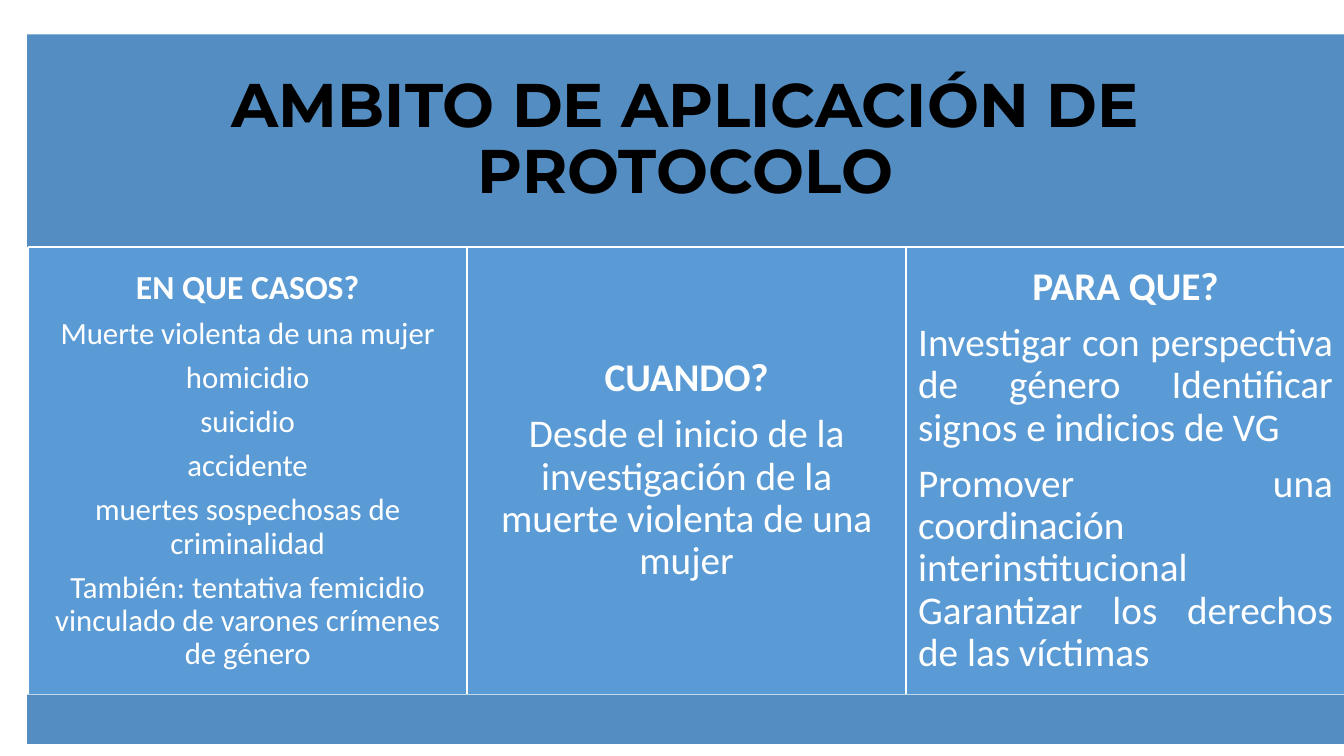
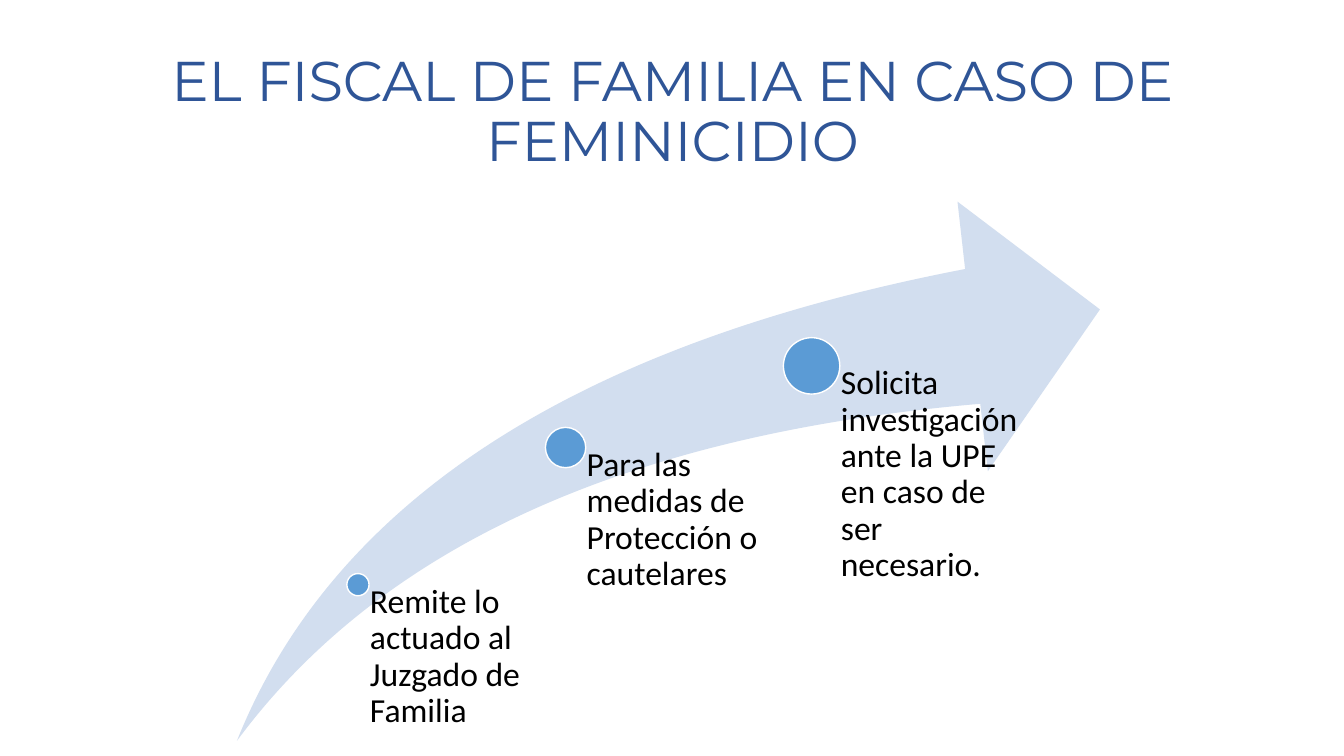
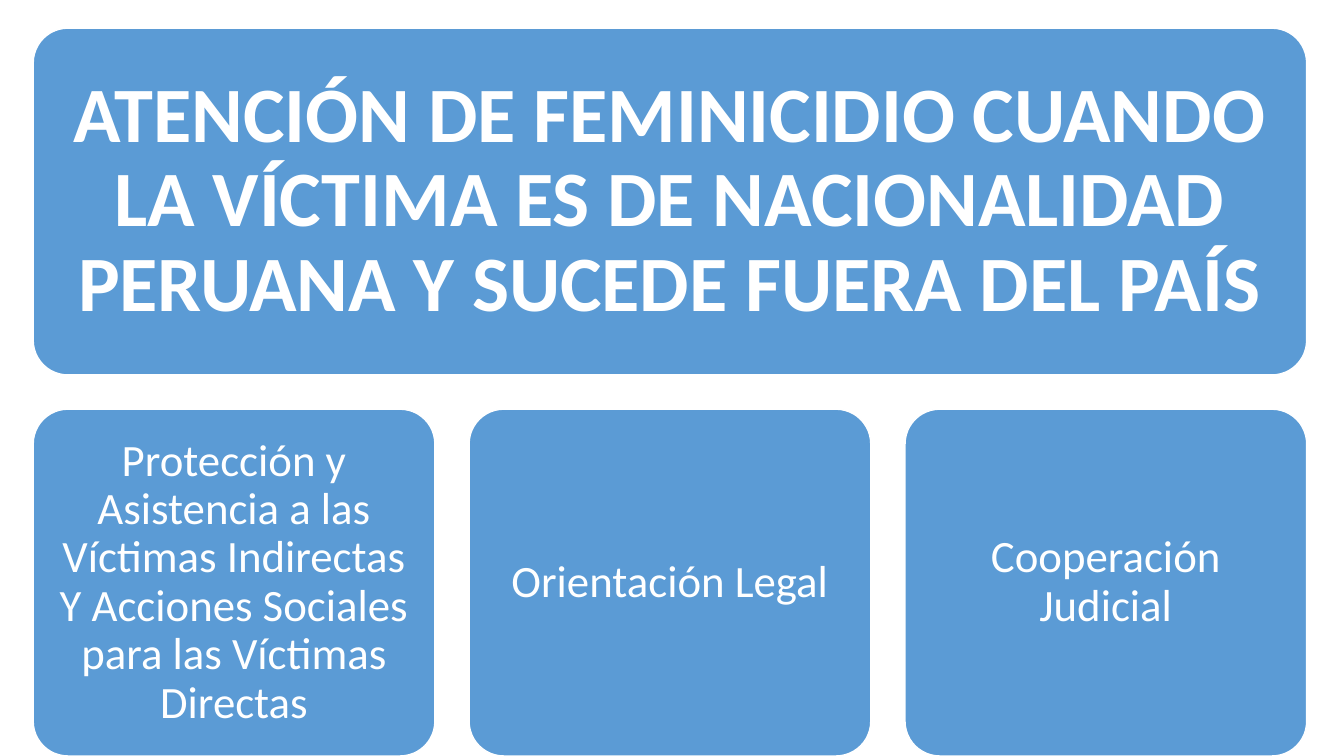
from dataclasses import dataclass

from pptx import Presentation
from pptx.dml.color import RGBColor
from pptx.enum.shapes import MSO_SHAPE
from pptx.enum.text import MSO_ANCHOR, PP_ALIGN
from pptx.util import Inches, Pt

RECT, ROUND, OVAL = MSO_SHAPE.RECTANGLE, MSO_SHAPE.ROUNDED_RECTANGLE, MSO_SHAPE.OVAL
SWOOSH = MSO_SHAPE.SWOOSH_ARROW
LEFT, CENTER, JUSTIFY = PP_ALIGN.LEFT, PP_ALIGN.CENTER, PP_ALIGN.JUSTIFY
TOP, MIDDLE = MSO_ANCHOR.TOP, MSO_ANCHOR.MIDDLE


@dataclass(frozen=True)
class Theme:
    blue: str = "5B9BD5"
    band: str = "538DC1"
    pale: str = "D2DEEF"
    title: str = "2F5597"
    white: str = "FFFFFF"
    black: str = "000000"
    body_font: str = "Calibri"
    title_font: str = "Montserrat"
    banner_size: int = 56
    band_size: int = 44
    title_size: int = 40
    card_size: int = 32
    column_size: int = 28
    step_size: int = 24
    list_size: int = 22
    line_spacing: float = 0.9
    space_after: float = 0.35


T = Theme()

SCOPE_TITLE = "AMBITO DE APLICACIÓN DE PROTOCOLO"
# heading, heading size, text size, text alignment, inset, paragraphs
SCOPE_COLUMNS = [
    ("EN QUE CASOS?", T.step_size, T.list_size, CENTER, 0.1, [
        "Muerte violenta de una mujer",
        "homicidio",
        "suicidio",
        "accidente",
        "muertes sospechosas de criminalidad",
        "También: tentativa femicidio vinculado de varones crímenes de género",
    ]),
    ("CUANDO?", T.column_size, T.column_size, CENTER, 0.12, [
        "Desde el inicio de la investigación de la muerte violenta de una mujer",
    ]),
    ("PARA QUE?", T.column_size, T.column_size, JUSTIFY, 0.12, [
        "Investigar con perspectiva de género Identificar signos e indicios de VG",
        "Promover una coordinación interinstitucional Garantizar los derechos de las víctimas",
    ]),
]

PROSECUTOR_TITLE = "EL FISCAL DE FAMILIA EN CASO DE FEMINICIDIO"
# dot centre x, dot centre y, dot diameter, text
STEPS = [
    (3.55, 5.8, 0.22, "Remite lo actuado al Juzgado de Familia"),
    (5.61, 4.44, 0.4, "Para las medidas de Protección o cautelares"),
    (8.05, 3.63, 0.56, "Solicita investigación ante la UPE en caso de ser necesario."),
]

ABROAD_TITLE = ("ATENCIÓN DE FEMINICIDIO CUANDO LA VÍCTIMA ES DE NACIONALIDAD "
                "PERUANA Y SUCEDE FUERA DEL PAÍS")
ABROAD_CARDS = [
    "Protección y Asistencia a las Víctimas Indirectas Y Acciones Sociales "
    "para las Víctimas Directas",
    "Orientación Legal",
    "Cooperación Judicial",
]


def add_figure(slide, kind, box, fill, line=None, adjustments=()):
    sp = slide.shapes.add_shape(kind, *map(Inches, box))
    sp.shadow.inherit = False
    sp.fill.solid()
    sp.fill.fore_color.rgb = RGBColor.from_string(fill)
    if line:
        sp.line.color.rgb = RGBColor.from_string(line)
        sp.line.width = Pt(1)
    else:
        sp.line.fill.background()
    for i, value in enumerate(adjustments):
        sp.adjustments[i] = value
    return sp


def set_frame(sp, anchor, insets):
    """Prepare the text frame; insets are left, top, right, bottom in inches."""
    tf = sp.text_frame
    tf.word_wrap = True
    tf.vertical_anchor = anchor
    (tf.margin_left, tf.margin_top,
     tf.margin_right, tf.margin_bottom) = map(Inches, insets)
    return tf


def add_text(tf, text, size, color=T.white, font=T.body_font, bold=False, align=CENTER):
    """Fill the first paragraph if it is still empty, else append one."""
    p = tf.paragraphs[0] if not tf.text else tf.add_paragraph()
    p.alignment = align
    p.line_spacing = T.line_spacing
    p.space_after = Pt(round(size * T.space_after, 1))
    r = p.add_run()
    r.text = text
    r.font.size = Pt(size)
    r.font.name = font
    r.font.bold = bold
    r.font.color.rgb = RGBColor.from_string(color)


def build_scope(slide):
    left, width, column_top, column_height = 0.27, 13.06, 2.45, 4.44
    header = add_figure(slide, RECT, (left, 0.34, width, 2.11), T.band)
    add_text(set_frame(header, MIDDLE, [0.18] * 4), SCOPE_TITLE, T.band_size,
             T.black, T.title_font, bold=True)
    column_width = width / len(SCOPE_COLUMNS)
    for i, (heading, head_size, size, align, inset, lines) in enumerate(SCOPE_COLUMNS):
        box = (left + 0.01 + i * column_width, column_top, column_width, column_height)
        tf = set_frame(add_figure(slide, RECT, box, T.blue, T.white), MIDDLE, [inset] * 4)
        add_text(tf, heading, head_size, bold=True)
        for text in lines:
            add_text(tf, text, size, align=align)
    add_figure(slide, RECT, (left, column_top + column_height, width, 0.49), T.band)


def build_prosecutor(slide):
    title = slide.shapes.add_textbox(*map(Inches, (0.92, 0.4, 11.5, 1.45)))
    add_text(set_frame(title, MIDDLE, (0.1, 0.05, 0.1, 0.05)), PROSECUTOR_TITLE,
             T.title_size, T.title, T.title_font)
    top, height = 2, 5.35
    add_figure(slide, SWOOSH, (2.35, top, 8.56, height), T.pale, adjustments=(0.25, 0.25))
    for x, y, size, text in STEPS:
        add_figure(slide, OVAL, (x - size / 2, y - size / 2, size, size), T.blue, T.white)
        label = slide.shapes.add_textbox(*map(Inches, (x, y, 2.06, top + height - y)))
        add_text(set_frame(label, TOP, (size / 2 + 0.01, 0, 0, 0)), text,
                 T.step_size, T.black, align=LEFT)


def build_abroad(slide):
    left, top, width, height, gap = 0.33, 0.28, 12.63, 3.44, 0.34

    def add_card(box, inset, text, size, bold=False):
        card = add_figure(slide, ROUND, box, T.blue, T.white, (0.1,))
        add_text(set_frame(card, MIDDLE, [inset] * 4), text, size, bold=bold)

    add_card((left, top, width, height), 0.23, ABROAD_TITLE, T.banner_size, bold=True)
    count = len(ABROAD_CARDS)
    card_width = (width - gap * (count - 1)) / count
    for i, text in enumerate(ABROAD_CARDS):
        x = left + i * (card_width + gap)
        add_card((x, top + height + gap, card_width, height), 0.13, text, T.card_size)


def main():
    prs = Presentation()
    prs.slide_width, prs.slide_height = Inches(13.33), Inches(7.5)
    for build in (build_scope, build_prosecutor, build_abroad):
        build(prs.slides.add_slide(prs.slide_layouts[6]))
    prs.save("out.pptx")


if __name__ == "__main__":
    main()
